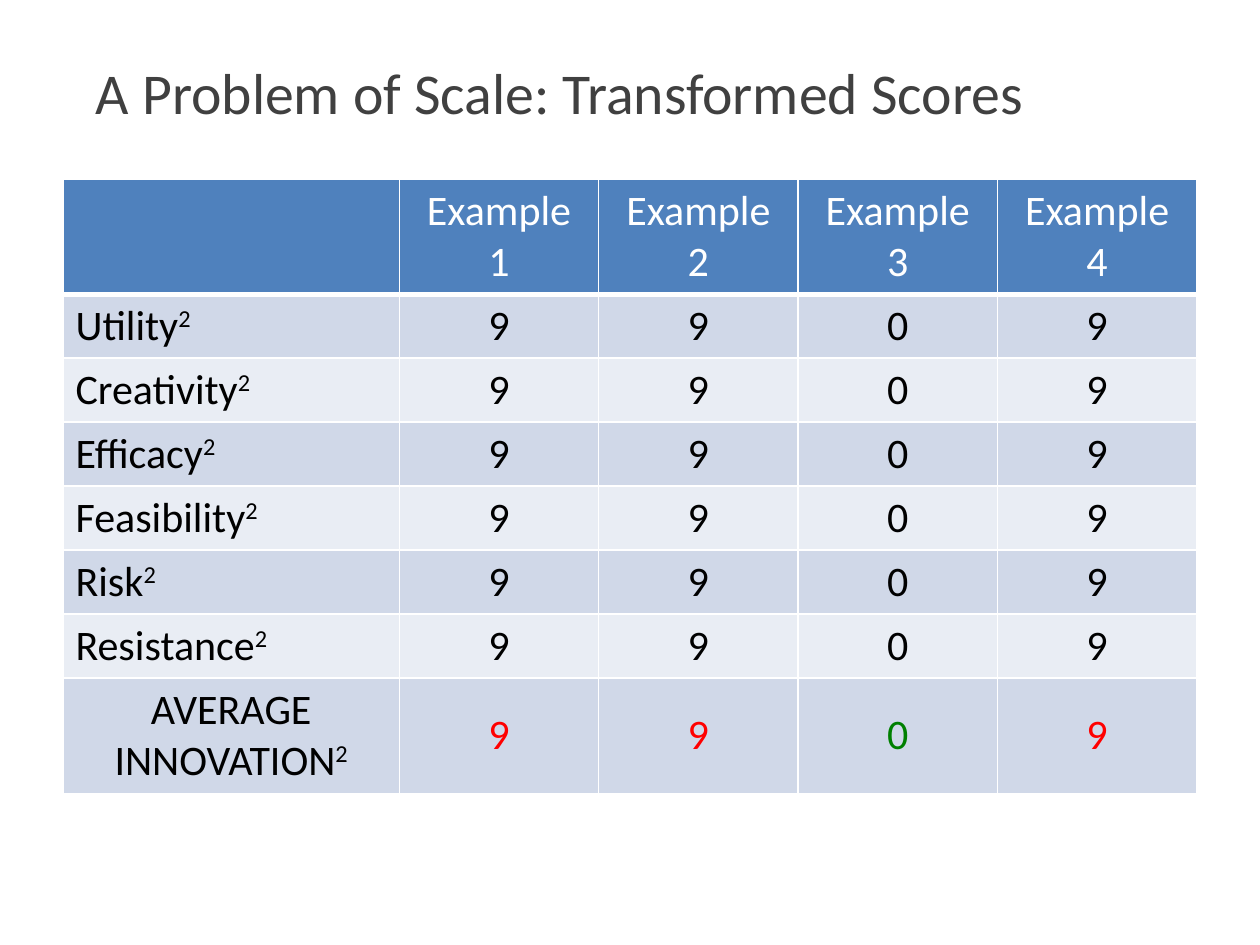
from dataclasses import dataclass

from lxml.etree import SubElement
from pptx import Presentation
from pptx.dml.color import RGBColor as RGB
from pptx.enum.text import MSO_ANCHOR as Anchor, PP_ALIGN as Align
from pptx.oxml.ns import qn
from pptx.util import Cm, Pt

TITLE = "A Problem of Scale: Transformed Scores"
EXAMPLES = ["Example 1", "Example 2", "Example 3", "Example 4"]
CRITERIA = ["Utility", "Creativity", "Efficacy", "Feasibility", "Risk", "Resistance"]
AVERAGE = "AVERAGE INNOVATION"
EXPONENT = "2"
SCORES = ["9", "9", "0", "9"]  # every criterion, and so the average, scores the same


@dataclass(frozen=True)
class Theme:
    font: str = "Calibri"
    title_size: int = 33
    table_size: int = 24
    title: str = "404040"
    header: str = "4F81BD"
    bands: tuple = ("D0D8E8", "E9EDF4")
    light: str = "FFFFFF"
    dark: str = "000000"
    high: str = "FF0000"
    low: str = "008000"
    rule: int = 1
    header_rule: int = 3


THEME = Theme()
LABEL_WIDTH, SCORE_WIDTH = 6.78, 4.02
TALL_ROW, SCORE_ROW = 2.3, 1.29


def add_run(paragraph, text, size, color):
    run = paragraph.add_run()
    run.text = text
    font = run.font
    font.name, font.size, font.bold = THEME.font, Pt(size), False
    font.color.rgb = RGB.from_string(color)
    return run


def set_borders(cell, top, bottom):
    """Draw light rules round a cell; top and bottom widths are in points."""
    properties = cell._tc.get_or_add_tcPr()
    for side, width in (("L", THEME.rule), ("R", THEME.rule), ("T", top), ("B", bottom)):
        rule = SubElement(properties, qn(f"a:ln{side}"), w=str(Pt(width)))
        fill = SubElement(rule, qn("a:solidFill"))
        SubElement(fill, qn("a:srgbClr"), val=THEME.light)


def write_cell(cell, text, color, align, squared=False):
    cell.vertical_anchor = Anchor.MIDDLE
    paragraph = cell.text_frame.paragraphs[0]
    paragraph.alignment = align
    if text:
        add_run(paragraph, text, THEME.table_size, color)
    if squared:
        exponent = add_run(paragraph, EXPONENT, THEME.table_size, color)
        exponent.font._element.set("baseline", "30000")


def add_title(slide):
    title = slide.shapes.title
    title.left, title.top, title.width, title.height = Cm(1.68), Cm(0.94), Cm(22.28), Cm(2.03)
    frame = title.text_frame
    frame.vertical_anchor = Anchor.MIDDLE
    frame.margin_bottom = Cm(0.36)
    paragraph = frame.paragraphs[0]
    paragraph.alignment = Align.LEFT
    add_run(paragraph, TITLE, THEME.title_size, THEME.title)


def add_score_table(slide):
    labels = ["", *CRITERIA, AVERAGE]
    heights = [TALL_ROW] + [SCORE_ROW] * len(CRITERIA) + [TALL_ROW]
    widths = [LABEL_WIDTH] + [SCORE_WIDTH] * len(EXAMPLES)
    table = slide.shapes.add_table(len(heights), len(widths), Cm(1.27), Cm(3.61),
                                   Cm(sum(widths)), Cm(sum(heights))).table
    for column, width in zip(table.columns, widths):
        column.width = Cm(width)

    for r, (label, height) in enumerate(zip(labels, heights)):
        table.rows[r].height = Cm(height)
        is_header, is_average = r == 0, label == AVERAGE
        band = THEME.header if is_header else THEME.bands[(r - 1) % 2]
        top = THEME.header_rule if r == 1 else THEME.rule
        bottom = THEME.header_rule if is_header else THEME.rule
        for c, text in enumerate([label, *(EXAMPLES if is_header else SCORES)]):
            cell = table.cell(r, c)
            set_borders(cell, top, bottom)
            cell.fill.solid()
            cell.fill.fore_color.rgb = RGB.from_string(band)
            color = THEME.light if is_header else THEME.dark
            if is_average and c > 0:
                color = THEME.low if text == "0" else THEME.high
            is_criterion = c == 0 and label in CRITERIA
            write_cell(cell, text, color, Align.LEFT if is_criterion else Align.CENTER,
                       squared=c == 0 and not is_header)


def main():
    deck = Presentation()
    deck.slide_width, deck.slide_height = Cm(25.4), Cm(19.05)
    slide = deck.slides.add_slide(deck.slide_layouts.get_by_name("Title Only"))
    add_title(slide)
    add_score_table(slide)
    deck.save("out.pptx")


if __name__ == "__main__":
    main()
